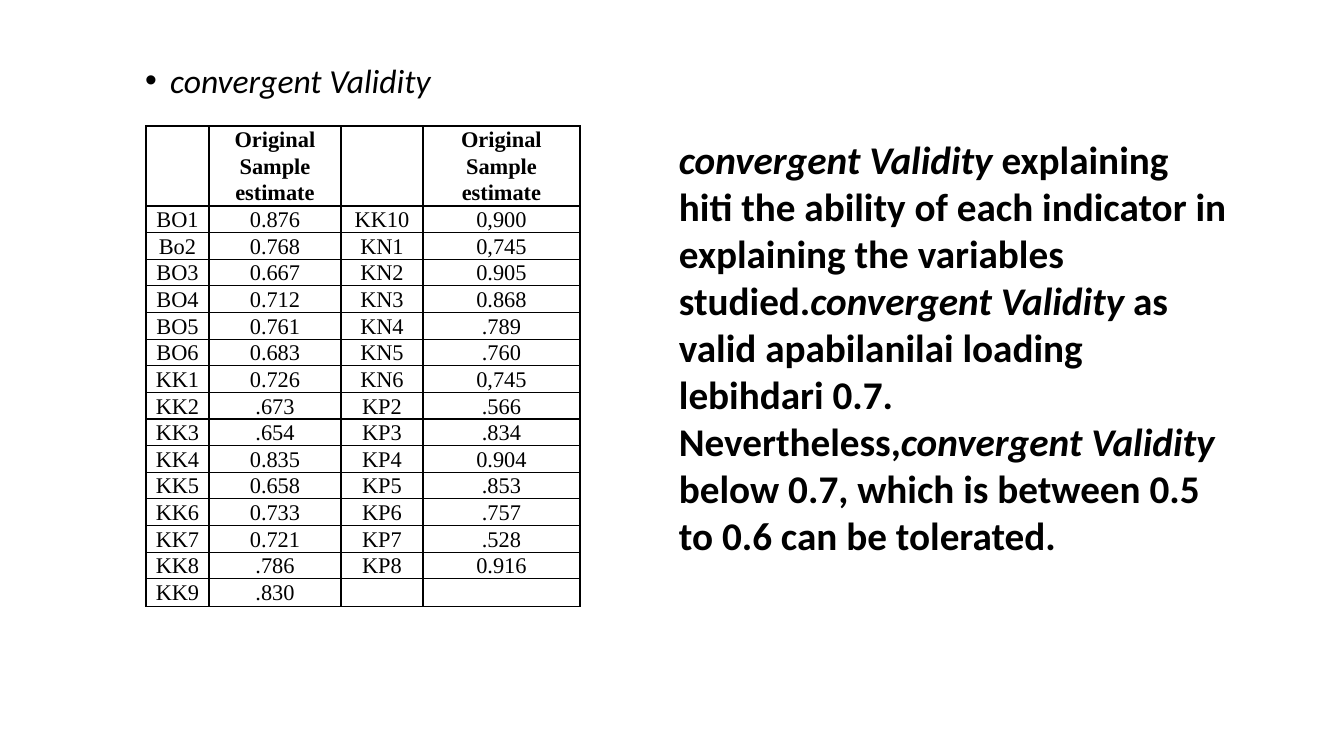
from lxml.etree import SubElement
from pptx import Presentation
from pptx.dml.color import RGBColor
from pptx.enum.text import MSO_ANCHOR, PP_ALIGN
from pptx.oxml.ns import qn
from pptx.util import Emu, Pt

SLIDE_W, SLIDE_H = 1344, 756
EMU_PER_PX = 12192000 / SLIDE_W
BLACK = RGBColor(0, 0, 0)

HEADING_FORMAT = dict(name="Calibri", size=Pt(24), bold=False, italic=True)
TABLE_FORMAT = dict(name="Times New Roman", size=Pt(16), italic=False)
EXPLANATION_FORMAT = dict(name="Calibri", size=Pt(28), bold=True)

COLUMN_WIDTHS = (63, 132, 82, 157)
HEADER_HEIGHT, ROW_HEIGHT = 80, 26
ESTIMATE = "Original Sample\nestimate"
LOADINGS = [
    ("", ESTIMATE, "", ESTIMATE),
    ("BO1", "0.876", "KK10", "0,900"),
    ("Bo2", "0.768", "KN1", "0,745"),
    ("BO3", "0.667", "KN2", "0.905"),
    ("BO4", "0.712", "KN3", "0.868"),
    ("BO5", "0.761", "KN4", ".789"),
    ("BO6", "0.683", "KN5", ".760"),
    ("KK1", "0.726", "KN6", "0,745"),
    ("KK2", ".673", "KP2", ".566"),
    ("KK3", ".654", "KP3", ".834"),
    ("KK4", "0.835", "KP4", "0.904"),
    ("KK5", "0.658", "KP5", ".853"),
    ("KK6", "0.733", "KP6", ".757"),
    ("KK7", "0.721", "KP7", ".528"),
    ("KK8", ".786", "KP8", "0.916"),
    ("KK9", ".830", "", ""),
]
EXPLANATION = [
    ("convergent Validity ", True),
    ("explaining hiti the ability of each indicator in explaining the variables studied.", False),
    ("convergent Validity ", True),
    ("as valid apabilanilai loading lebihdari 0.7. Nevertheless,", False),
    ("convergent Validity", True),
    (" below 0.7, which is between 0.5 to 0.6 can be tolerated.", False),
]


def px(length):
    return Emu(round(length * EMU_PER_PX))


def set_attributes(target, values):
    for attribute, value in values.items():
        setattr(target, attribute, value)


def add_run(paragraph, text, **font_format):
    run = paragraph.add_run()
    run.text = text
    set_attributes(run.font, font_format)
    run.font.color.rgb = BLACK


def fill_heading(body):
    set_attributes(body, dict(left=px(84), top=px(59), width=px(1159), height=px(480)))
    heading = body.text_frame.paragraphs[0]
    set_attributes(heading, dict(level=1, line_spacing=0.9, space_before=Pt(0)))
    properties = heading._p.get_or_add_pPr()
    properties.set("marL", str(px(76)))
    properties.set("indent", str(-px(25)))
    SubElement(properties, qn("a:buFont"), typeface="Arial")
    SubElement(properties, qn("a:buChar"), char="•")
    add_run(heading, "convergent Validity", **HEADING_FORMAT)


def add_borders(cell):
    properties = cell._tc.get_or_add_tcPr()
    for side in ("lnL", "lnR", "lnT", "lnB"):
        border = SubElement(properties, qn(f"a:{side}"), w=str(Pt(1)))
        solid = SubElement(border, qn("a:solidFill"))
        SubElement(solid, qn("a:srgbClr"), val=str(BLACK))


def fill_cell(cell, text, bold):
    add_borders(cell)
    cell.fill.background()
    set_attributes(cell, dict(
        margin_left=px(7), margin_right=px(7), margin_top=0, margin_bottom=0,
        vertical_anchor=MSO_ANCHOR.TOP,
    ))
    frame = cell.text_frame
    for index, line in enumerate(text.split("\n")):
        paragraph = frame.add_paragraph() if index else frame.paragraphs[0]
        set_attributes(paragraph, dict(alignment=PP_ALIGN.CENTER, line_spacing=1.07))
        if line:
            add_run(paragraph, line, bold=bold, **TABLE_FORMAT)
        else:
            SubElement(paragraph._p, qn("a:endParaRPr"), sz="1600")


def add_loadings_table(slide):
    height = HEADER_HEIGHT + ROW_HEIGHT * (len(LOADINGS) - 1)
    loadings = slide.shapes.add_table(
        len(LOADINGS), len(COLUMN_WIDTHS),
        px(146), px(126), px(sum(COLUMN_WIDTHS)), px(height),
    ).table
    set_attributes(loadings, dict(first_row=False, horz_banding=False))
    for column, width in zip(loadings.columns, COLUMN_WIDTHS):
        column.width = px(width)
    for index, (row, values) in enumerate(zip(loadings.rows, LOADINGS)):
        row.height = px(ROW_HEIGHT if index else HEADER_HEIGHT)
        for cell, text in zip(row.cells, values):
            fill_cell(cell, text, bold=index == 0)


def add_explanation(slide):
    frame = slide.shapes.add_textbox(px(669), px(130), px(568), px(532)).text_frame
    frame.word_wrap = True
    for text, italic in EXPLANATION:
        add_run(frame.paragraphs[0], text, italic=italic, **EXPLANATION_FORMAT)


def main():
    deck = Presentation()
    set_attributes(deck, dict(slide_width=px(SLIDE_W), slide_height=px(SLIDE_H)))
    slide = deck.slides.add_slide(deck.slide_layouts[1])
    title = slide.shapes.title._element
    title.getparent().remove(title)
    fill_heading(slide.placeholders[1])
    add_loadings_table(slide)
    add_explanation(slide)
    deck.save("out.pptx")


if __name__ == "__main__":
    main()
